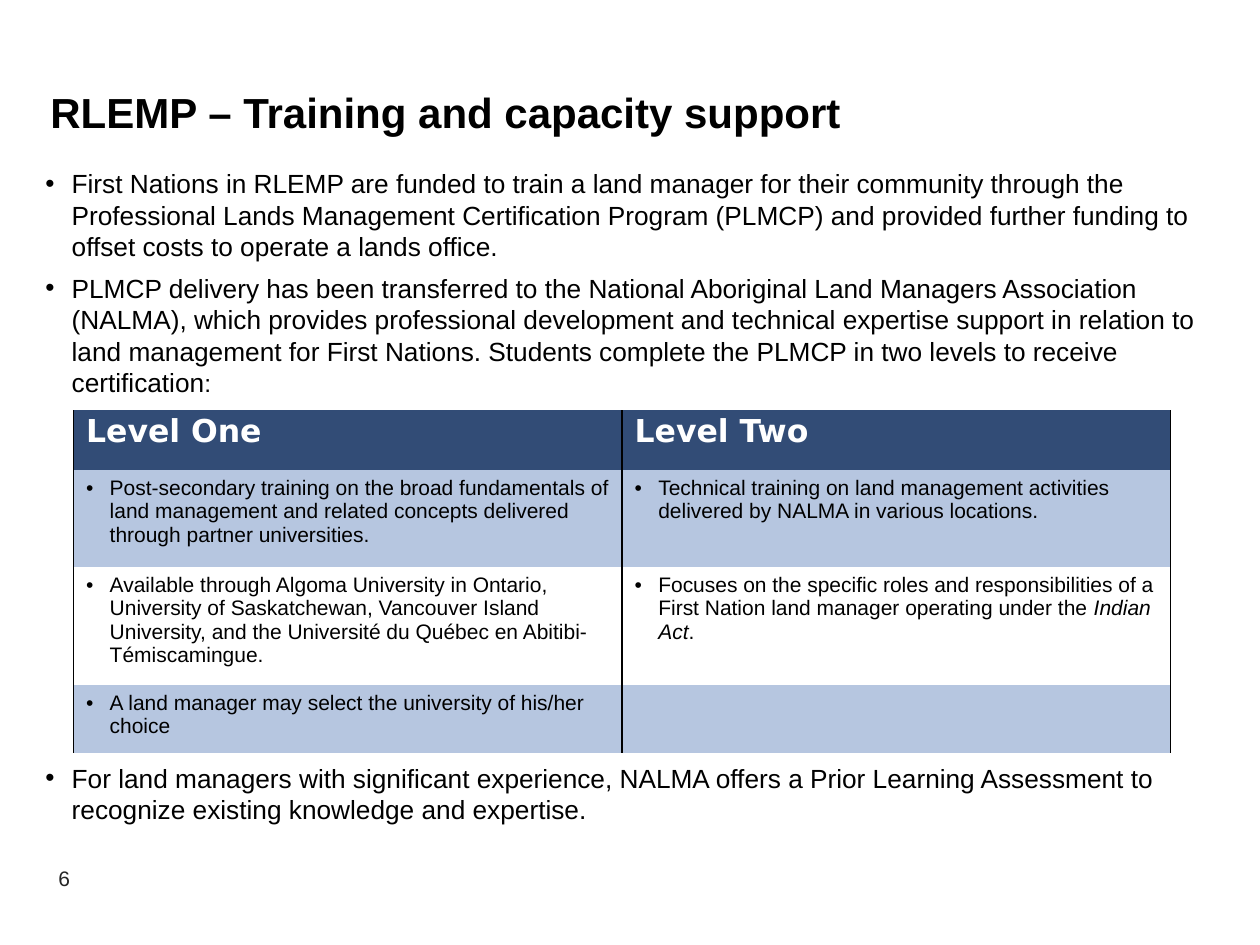
"""Build the slide on RLEMP training and capacity support."""
from dataclasses import dataclass

from lxml.etree import SubElement
from pptx import Presentation
from pptx.dml.color import RGBColor
from pptx.enum.text import MSO_ANCHOR, PP_ALIGN
from pptx.oxml import parse_xml
from pptx.oxml.ns import nsdecls, qn
from pptx.util import Pt


@dataclass(frozen=True)
class Theme:
    body_font: str = "Arial"
    header_font: str = "DejaVu Sans"
    black: str = "000000"
    white: str = "FFFFFF"
    number_grey: str = "262626"
    header_blue: str = "324C76"
    band_blue: str = "B6C6E0"
    title_size: float = 24
    body_size: float = 15
    colon_size: float = 14
    header_size: float = 18
    small_size: float = 12


THEME = Theme()


@dataclass(frozen=True)
class Run:
    text: str
    size: float = THEME.small_size
    color: str = THEME.black
    font: str = THEME.body_font
    bold: bool = False
    italic: bool = False


@dataclass(frozen=True)
class Box:
    left: float
    top: float
    width: float
    height: float

    def lengths(self) -> tuple:
        """Return the four lengths in points."""
        return Pt(self.left), Pt(self.top), Pt(self.width), Pt(self.height)


@dataclass(frozen=True)
class Row:
    height: float
    fill: str
    cells: tuple


def header(text: str) -> tuple:
    """Return the runs of a column heading."""
    return (Run(text, THEME.header_size, THEME.white, THEME.header_font, bold=True),)


def statement(text: str) -> Run:
    """Return a run at body size."""
    return Run(text, THEME.body_size)


INTRODUCTION = (
    (statement(
        "First Nations in RLEMP are funded to train a land manager for their community "
        "through the Professional Lands Management Certification Program (PLMCP) and "
        "provided further funding to offset costs to operate a lands office."),),
    (statement(
        "PLMCP delivery has been transferred to the National Aboriginal Land Managers "
        "Association (NALMA), which provides professional development and technical "
        "expertise support in relation to land management for First Nations. Students "
        "complete the PLMCP in two levels to receive certification"),
     Run(":", THEME.colon_size)),
)
PRIOR_LEARNING = (
    (statement(
        "For land managers with significant experience, NALMA offers a Prior Learning "
        "Assessment to recognize existing knowledge and expertise."),),
)
LEVELS = (
    Row(34.3, THEME.header_blue, (header("Level One"), header("Level Two"))),
    Row(55.4, THEME.band_blue, (
        (Run("Post-secondary training on the broad fundamentals of land management and "
             "related concepts delivered through partner universities."),),
        (Run("Technical training on land management activities delivered by NALMA in "
             "various locations."),))),
    Row(67.4, THEME.white, (
        (Run("Available through Algoma University in Ontario, University of Saskatchewan, "
             "Vancouver Island University, and the Université du Québec en "
             "Abitibi-Témiscamingue."),),
        (Run("Focuses on the specific roles and responsibilities of a First Nation land "
             "manager operating under the"), Run(" Indian Act", italic=True), Run(".")))),
    Row(38.9, THEME.band_blue, (
        (Run("A land manager may select the university of his/her choice"),), ())),
)


def add_runs(paragraph, runs: tuple) -> None:
    """Add formatted runs to a paragraph."""
    for part in runs:
        run = paragraph.add_run()
        run.text = part.text
        run.font.name = part.font
        run.font.size = Pt(part.size)
        run.font.bold = part.bold
        run.font.italic = part.italic
        run.font.color.rgb = RGBColor.from_string(part.color)


def set_bullet(paragraph, indent: float) -> None:
    """Give a paragraph a hanging bullet."""
    properties = paragraph._p.get_or_add_pPr()
    properties.set("marL", str(Pt(indent)))
    properties.set("indent", str(-Pt(indent)))
    SubElement(properties, qn("a:buFont"), typeface=THEME.body_font)
    SubElement(properties, qn("a:buChar"), char="•")


def clear_margins(frame) -> None:
    """Remove the insets of a text frame and let it wrap from the top."""
    frame.margin_left = frame.margin_right = frame.margin_top = frame.margin_bottom = 0
    frame.vertical_anchor = MSO_ANCHOR.TOP
    frame.word_wrap = True


def add_title(slide, text: str, box: Box) -> None:
    """Place and fill the title."""
    title = slide.shapes.title
    title.left, title.top, title.width, title.height = box.lengths()
    clear_margins(title.text_frame)
    paragraph = title.text_frame.paragraphs[0]
    paragraph.alignment = PP_ALIGN.LEFT
    paragraph.line_spacing = Pt(24)
    add_runs(paragraph, (Run(text, THEME.title_size, bold=True),))


def add_statements(slide, statements: tuple, box: Box) -> None:
    """Add a box of bulleted statements."""
    frame = slide.shapes.add_textbox(*box.lengths()).text_frame
    clear_margins(frame)
    for index, runs in enumerate(statements):
        paragraph = frame.add_paragraph() if index else frame.paragraphs[0]
        set_bullet(paragraph, 15)
        paragraph.line_spacing = Pt(18)
        paragraph.space_after = Pt(5.5)
        add_runs(paragraph, runs)


def set_borders(cell) -> None:
    """Draw black side borders only."""
    black_line = f'<a:solidFill><a:srgbClr val="{THEME.black}"/></a:solidFill>'
    sides = {"lnL": black_line, "lnR": black_line, "lnT": "<a:noFill/>", "lnB": "<a:noFill/>"}
    properties = cell._tc.get_or_add_tcPr()
    for position, (side, line) in enumerate(sides.items()):
        border = f'<a:{side} {nsdecls("a")} w="{Pt(1)}">{line}</a:{side}>'
        properties.insert(position, parse_xml(border))


def add_levels(slide, rows: tuple, box: Box) -> None:
    """Add the table of the two certification levels."""
    levels = slide.shapes.add_table(len(rows), len(rows[0].cells), *box.lengths()).table
    levels.horz_banding = False
    for row_index, row in enumerate(rows):
        levels.rows[row_index].height = Pt(row.height)
        for column_index, runs in enumerate(row.cells):
            cell = levels.cell(row_index, column_index)
            cell.fill.solid()
            cell.fill.fore_color.rgb = RGBColor.from_string(row.fill)
            set_borders(cell)
            paragraph = cell.text_frame.paragraphs[0]
            if row_index and runs:
                set_bullet(paragraph, 13.5)
            paragraph.line_spacing = Pt(13.4) if row_index else 0.9
            add_runs(paragraph, runs)


def add_slide_number(slide, number: str, box: Box) -> None:
    """Add the slide number."""
    frame = slide.shapes.add_textbox(*box.lengths()).text_frame
    frame.word_wrap = True
    frame.paragraphs[0].alignment = PP_ALIGN.CENTER
    add_runs(frame.paragraphs[0], (Run(number, color=THEME.number_grey),))


def main() -> None:
    """Build and save the slide."""
    deck = Presentation()
    deck.slide_width, deck.slide_height = Pt(720), Pt(540)
    slide = deck.slides.add_slide(deck.slide_layouts[5])
    add_title(slide, "RLEMP – Training and capacity support", Box(28.8, 54, 618, 24))
    add_statements(slide, INTRODUCTION, Box(26, 95.8, 670, 134))
    add_levels(slide, LEVELS, Box(42, 234.3, 627, 196))
    add_statements(slide, PRIOR_LEARNING, Box(26, 435.5, 670, 42))
    add_slide_number(slide, "6", Box(2.9, 491, 67.7, 21.6))
    deck.save("out.pptx")


if __name__ == "__main__":
    main()
